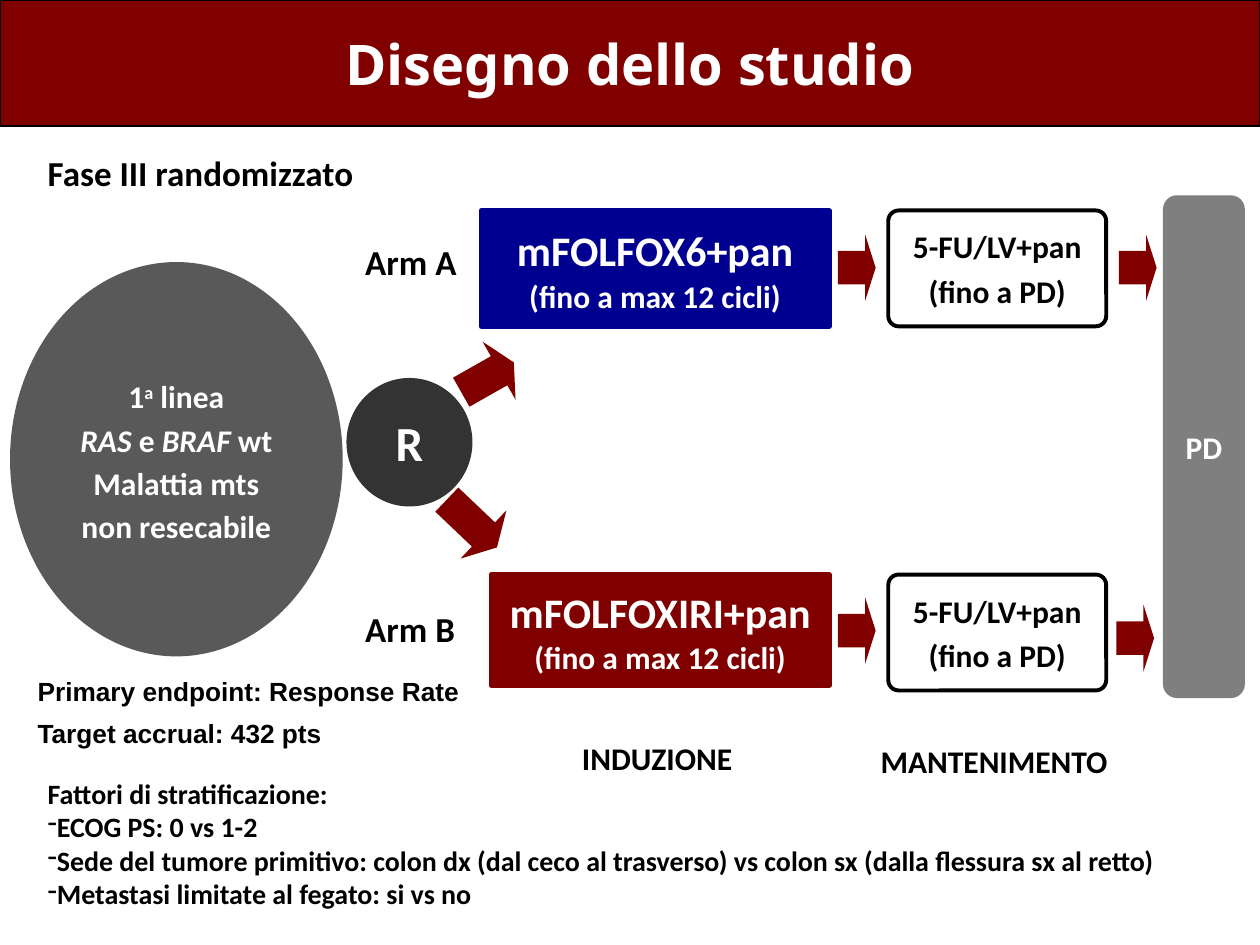
import pptx
import pptx.dml.color
import pptx.enum.shapes
import pptx.enum.text
import pptx.util
import lxml.etree

SCALE = 9144
SHAPES = pptx.enum.shapes.MSO_SHAPE
ALIGN = pptx.enum.text.PP_ALIGN
ANCHOR = pptx.enum.text.MSO_ANCHOR
DARK_RED, BLUE, BLACK, WHITE = "800000", "000090", "000000", "FFFFFF"


def px(length):
    """Turn px, one hundred to the inch, into EMU."""
    return pptx.util.Emu(length * SCALE)


def color(value):
    """Turn a hex string into a colour."""
    return pptx.dml.color.RGBColor.from_string(value)


def paint(shape, fill, line=None, width=0.75):
    """Set the fill and outline of a shape."""
    shape.fill.solid()
    shape.fill.fore_color.rgb = color(fill)
    if line:
        shape.line.color.rgb = color(line)
        shape.line.width = pptx.util.Pt(width)
    else:
        shape.line.fill.background()


def add_run(paragraph, text, size, ink, name="Calibri", italic=False, raised=False):
    """Add one bold run to a paragraph."""
    run = paragraph.add_run()
    run.text = text
    run.font.name = name
    run.font.size = pptx.util.Pt(size)
    run.font.bold = True
    run.font.italic = italic
    run.font.color.rgb = color(ink)
    if raised:
        run.font._element.set("baseline", "30000")


def add_paragraphs(frame, count, align=ALIGN.LEFT, spacing=None, before=0, after=0):
    """Return the given number of formatted empty paragraphs of a text frame."""
    paragraphs = [frame.paragraphs[0]] + [frame.add_paragraph() for _ in range(count - 1)]
    for index, paragraph in enumerate(paragraphs):
        paragraph.alignment = align
        paragraph.space_before = pptx.util.Pt(before if index else 0)
        paragraph.space_after = pptx.util.Pt(after)
        if spacing:
            paragraph.line_spacing = spacing
    return paragraphs


def add_box(slide, kind, box, fill, line=None, width=0.75, corner=None, wrap=True):
    """Add a painted preset shape with middle-anchored text."""
    shape = slide.shapes.add_shape(kind, *map(px, box))
    shape.shadow.inherit = False
    paint(shape, fill, line, width)
    if corner is not None:
        shape.adjustments[0] = corner
    shape.text_frame.word_wrap = wrap
    shape.text_frame.vertical_anchor = ANCHOR.MIDDLE
    return shape


def add_arrow(slide, box, rotation=0):
    """Add a red block arrow."""
    arrow = add_box(slide, SHAPES.RIGHT_ARROW, box, DARK_RED)
    arrow.adjustments[0] = 0.5
    arrow.adjustments[1] = 0.28
    arrow.rotation = rotation


def add_label(slide, box, text, size, name="Calibri"):
    """Add a one-line black label."""
    frame = slide.shapes.add_textbox(*map(px, box)).text_frame
    frame.word_wrap = False
    add_run(frame.paragraphs[0], text, size, BLACK, name)


def add_title(slide, box, text):
    """Format the title placeholder as a banner."""
    title = slide.shapes.title
    title.left, title.top, title.width, title.height = map(px, box)
    paint(title, DARK_RED, BLACK)
    title.text_frame.vertical_anchor = ANCHOR.MIDDLE
    paragraph = add_paragraphs(title.text_frame, 1, ALIGN.CENTER)[0]
    add_run(paragraph, text, 32, WHITE, "Noto Sans")


def add_population(slide, box):
    """Draw the patients, the randomisation node and its two arrows."""
    left, top, width, height = box
    patients = add_box(slide, SHAPES.OVAL, (left, top, width, height), "595959", wrap=False)
    lines = [
        [("1", {}), ("a", {"raised": True}), (" linea", {})],
        [("RAS", {"italic": True}), (" e ", {}), ("BRAF ", {"italic": True}), ("wt", {})],
        [("Malattia mts", {})],
        [("non resecabile", {})],
    ]
    paragraphs = add_paragraphs(patients.text_frame, len(lines), ALIGN.CENTER, 1.1, after=1)
    for paragraph, runs in zip(paragraphs, lines):
        for text, style in runs:
            add_run(paragraph, text, 18, WHITE, **style)
    node = add_box(slide, SHAPES.OVAL, (left + 267, top + 92, 100, 102), "333333", wrap=False)
    add_run(add_paragraphs(node.text_frame, 1, ALIGN.CENTER)[0], "R", 28, WHITE)
    add_arrow(slide, (left + 355, top + 65, 48, 53), 330.4)
    add_arrow(slide, (left + 339, top + 181, 55, 53), 43.6)


def add_arm(slide, box, name, regimen, fill, induction, arrows):
    """Draw one arm: label, induction, maintenance and the arrows after them."""
    left, top, width, height = box
    inset, induction_height, label_drop = induction
    add_label(slide, (left, top + label_drop, 95, 44), name, 20)
    therapy_box = (left + inset, top, 378 - inset, induction_height)
    therapy = add_box(slide, SHAPES.RECTANGLE, therapy_box, fill, fill, 3)
    heading, limit = add_paragraphs(therapy.text_frame, 2, ALIGN.CENTER, 1.05)
    add_run(heading, regimen, 24, WHITE)
    add_run(limit, "(fino a max 12 cicli)", 18, WHITE)
    upkeep_box = (left + width - 173, top, 173, height)
    upkeep = add_box(slide, SHAPES.ROUNDED_RECTANGLE, upkeep_box, WHITE, BLACK, 2.25, 0.09)
    paragraphs = add_paragraphs(upkeep.text_frame, 2, ALIGN.CENTER, before=3.6)
    for paragraph, text in zip(paragraphs, ("5-FU/LV+pan", "(fino a PD)")):
        add_run(paragraph, text, 18, BLACK)
    for across, down in arrows:
        add_arrow(slide, (left + across, top + down, 30, 53))


def add_progression(slide, box):
    """Draw the progression bar where both arms end."""
    bar = add_box(slide, SHAPES.ROUNDED_RECTANGLE, box, "7F7F7F", corner=0.17)
    add_run(add_paragraphs(bar.text_frame, 1, ALIGN.CENTER)[0], "PD", 18, WHITE)


def add_factors(slide, box, heading, factors):
    """Write the stratification factors as a dashed list."""
    frame = slide.shapes.add_textbox(*map(px, box)).text_frame
    frame.word_wrap = True
    first, *items = add_paragraphs(frame, len(factors) + 1)
    add_run(first, heading, 16, BLACK)
    for paragraph, text in zip(items, factors):
        properties = paragraph._p.get_or_add_pPr()
        properties.set("marL", "0")
        properties.set("indent", "0")
        namespace = "{" + properties.nsmap["a"] + "}"
        lxml.etree.SubElement(properties, namespace + "buFontTx")
        lxml.etree.SubElement(properties, namespace + "buChar").set("char", "-")
        add_run(paragraph, text, 16, BLACK)


def main():
    """Build and save the study design slide."""
    presentation = pptx.Presentation()
    presentation.slide_width, presentation.slide_height = px(1000), px(750)
    slide = presentation.slides.add_slide(presentation.slide_layouts[5])
    add_title(slide, (0, 0, 1000, 100), "Disegno dello studio")
    add_label(slide, (28, 115, 267, 44), "Fase III randomizzato", 20)
    add_population(slide, (8, 208, 264, 313))
    add_arm(slide, (280, 167, 598, 92), "Arm A", "mFOLFOX6+pan", BLUE,
            (102, 92, 19), [(385, 19), (608, 19)])
    add_arm(slide, (280, 456, 598, 92), "Arm B", "mFOLFOXIRI+pan", DARK_RED,
            (110, 88, 21), [(385, 18), (606, 24)])
    add_progression(slide, (923, 155, 65, 399))
    add_label(slide, (452, 582, 141, 40), "INDUZIONE", 18)
    add_label(slide, (689, 584, 213, 40), "MANTENIMENTO", 18)
    add_label(slide, (20, 531, 358, 35), "Primary endpoint: Response Rate", 15, "Arial")
    add_label(slide, (20, 564, 248, 35), "Target accrual: 432 pts", 15, "Arial")
    add_factors(slide, (28, 611, 945, 118), "Fattori di stratificazione:", [
        "ECOG PS: 0 vs 1-2",
        "Sede del tumore primitivo: colon dx (dal ceco al trasverso) "
        "vs colon sx (dalla flessura sx al retto)",
        "Metastasi limitate al fegato: si vs no",
    ])
    presentation.save("out.pptx")


if __name__ == "__main__":
    main()
